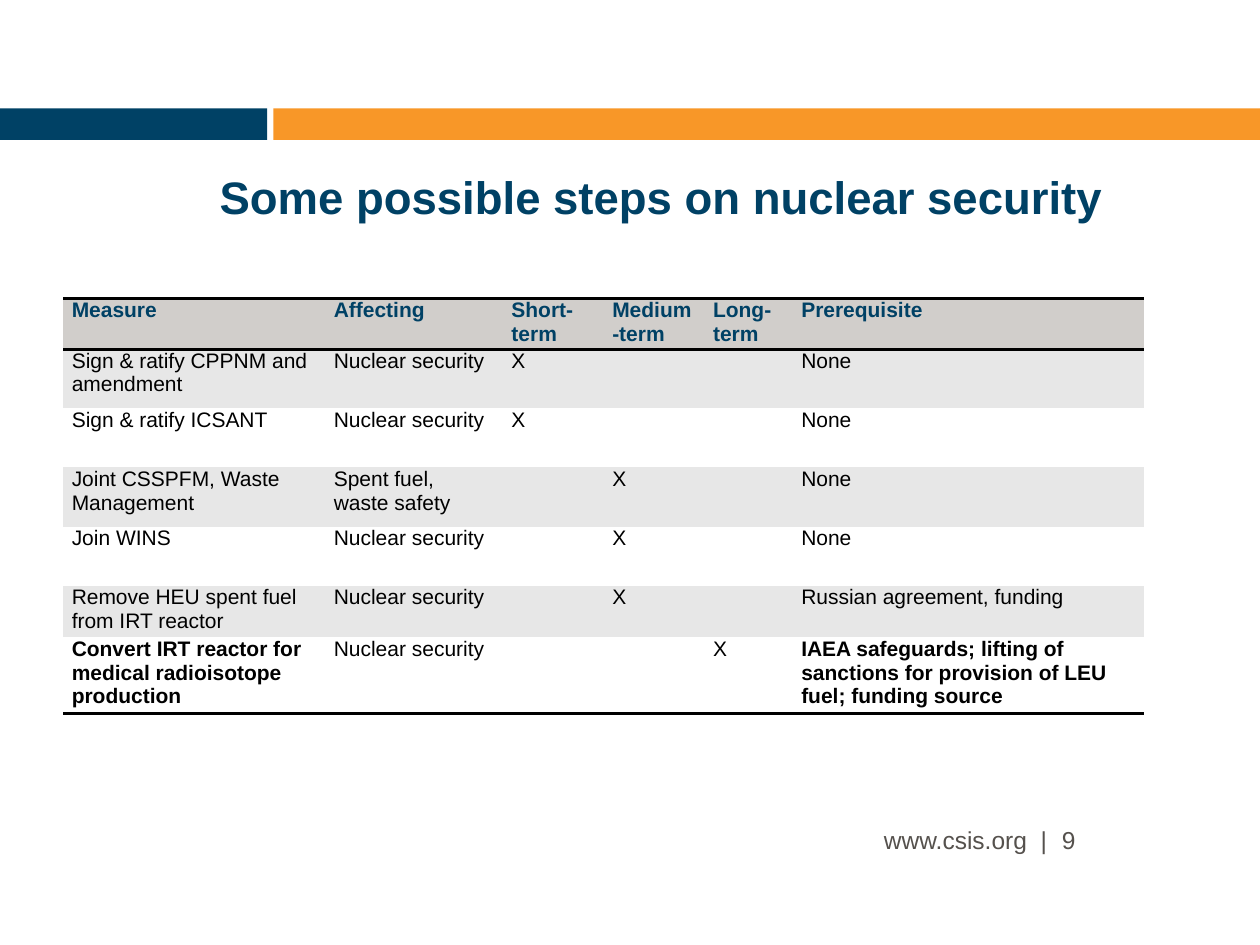
from lxml import etree
from pptx import Presentation
from pptx.dml.color import RGBColor
from pptx.enum.shapes import MSO_SHAPE
from pptx.enum.text import MSO_ANCHOR, PP_ALIGN
from pptx.oxml.ns import qn
from pptx.util import Inches, Pt

RECT = MSO_SHAPE.RECTANGLE
LEFT, MID, RIGHT = PP_ALIGN.LEFT, PP_ALIGN.CENTER, PP_ALIGN.RIGHT
MIDDLE = MSO_ANCHOR.MIDDLE
PLAIN = "{2D5ABB26-0587-4C30-8999-92F81FD0307C}"
HUES = {"navy": "004165", "gold": "F89728", "gray": "55514D", "head": "D1CECB",
        "band": "E7E7E7", "white": "FFFFFF", "black": "000000"}
COLS = [2.08, 1.41, 0.8, 0.8, 0.7, 2.79]
ROWS = [0.4] + [0.47] * 4 + [0.41, 0.56]
CELLS = [
    ["Measure", "Affecting", "Short-term", "Medium-term", "Long-term", "Prerequisite"],
    ["Sign & ratify CPPNM and\namendment", "Nuclear security", "X", "", "", "None"],
    ["Sign & ratify ICSANT", "Nuclear security", "X", "", "", "None"],
    ["Joint CSSPFM, Waste Management", "Spent fuel, waste safety", "", "X", "", "None"],
    ["Join WINS", "Nuclear security", "", "X", "", "None"],
    ["Remove HEU spent fuel from IRT reactor", "Nuclear security", "", "X", "",
     "Russian agreement, funding"],
    ["Convert IRT reactor for medical radioisotope production", "Nuclear security", "", "", "X",
     "IAEA safeguards; lifting of sanctions for provision of LEU fuel; funding source"],
]


def color(name):
    return RGBColor.from_string(HUES[name])


def paint(item, name):
    item.fill.solid()
    item.fill.fore_color.rgb = color(name)


def write(frame, text, hue, align=LEFT, **form):
    frame.word_wrap = True
    frame.text = text
    for para in frame.paragraphs:
        para.alignment = align
        for run in para.runs:
            for key, value in {"name": "Arial", **form}.items():
                setattr(run.font, key, value)
            run.font.color.rgb = color(hue)


def label(slide, box, text, hue, align, **form):
    frame = slide.shapes.add_textbox(*map(Inches, box)).text_frame
    frame.vertical_anchor = MIDDLE
    write(frame, text, hue, align, **form)


def add_bars(slide, box):
    left, top, width, height = box
    split, gap = 2.12, 0.05
    start = split + gap
    for x, wide, hue in ((0, split, "navy"), (start, width - start, "gold")):
        bar = slide.shapes.add_shape(RECT, *map(Inches, (left + x, top, wide, height)))
        paint(bar, hue)
        bar.line.fill.background()
        bar.shadow.inherit = False


def add_rule(cell, side):
    line = etree.Element(qn("a:" + side), w=str(Pt(2)))
    fill = etree.SubElement(line, qn("a:solidFill"))
    etree.SubElement(fill, qn("a:srgbClr"), val=HUES["black"])
    cell._tc.get_or_add_tcPr().insert(0, line)


def add_steps(slide, box):
    frame = slide.shapes.add_table(len(ROWS), len(COLS), *map(Inches, box))
    table = frame.table
    table._tbl.tblPr.find(qn("a:tableStyleId")).text = PLAIN
    for col, width in zip(table.columns, COLS):
        col.width = Inches(width)
    last = len(ROWS) - 1
    for i, (row, height) in enumerate(zip(table.rows, ROWS)):
        row.height = Inches(height)
        hue = "head" if i == 0 else "band" if i % 2 else "white"
        for j, cell in enumerate(row.cells):
            cell.margin_left = cell.margin_right = Inches(0.07)
            cell.margin_top = cell.margin_bottom = 0
            bold = i == 0 or (i == last and j in (0, len(COLS) - 1))
            write(cell.text_frame, CELLS[i][j], "black" if i else "navy",
                  size=Pt(12), bold=bold)
            paint(cell, hue)
            if i in (0, last):
                add_rule(cell, "lnB")
            if i == 0:
                add_rule(cell, "lnT")


def add_foot(slide, box):
    left, top, width, height = box
    site, gap = 1.58, 1.5
    label(slide, (left, top, site, height), "www.csis.org  |", "gray", RIGHT, size=Pt(14))
    label(slide, (left + gap, top, width - gap, height), "9", "gray", LEFT, size=Pt(14))


def main():
    deck = Presentation()
    deck.slide_width, deck.slide_height = Inches(10), Inches(7.5)
    slide = deck.slides.add_slide(deck.slide_layouts[6])
    add_bars(slide, (0, 0.86, 10, 0.25))
    label(slide, (0.75, 1.29, 9, 0.54), "Some possible steps on nuclear security",
          "navy", MID, size=Pt(26), bold=True)
    add_steps(slide, (0.5, 2.37, sum(COLS), sum(ROWS)))
    add_foot(slide, (6.83, 6.5, 2.08, 0.33))
    deck.save("out.pptx")


if __name__ == "__main__":
    main()
